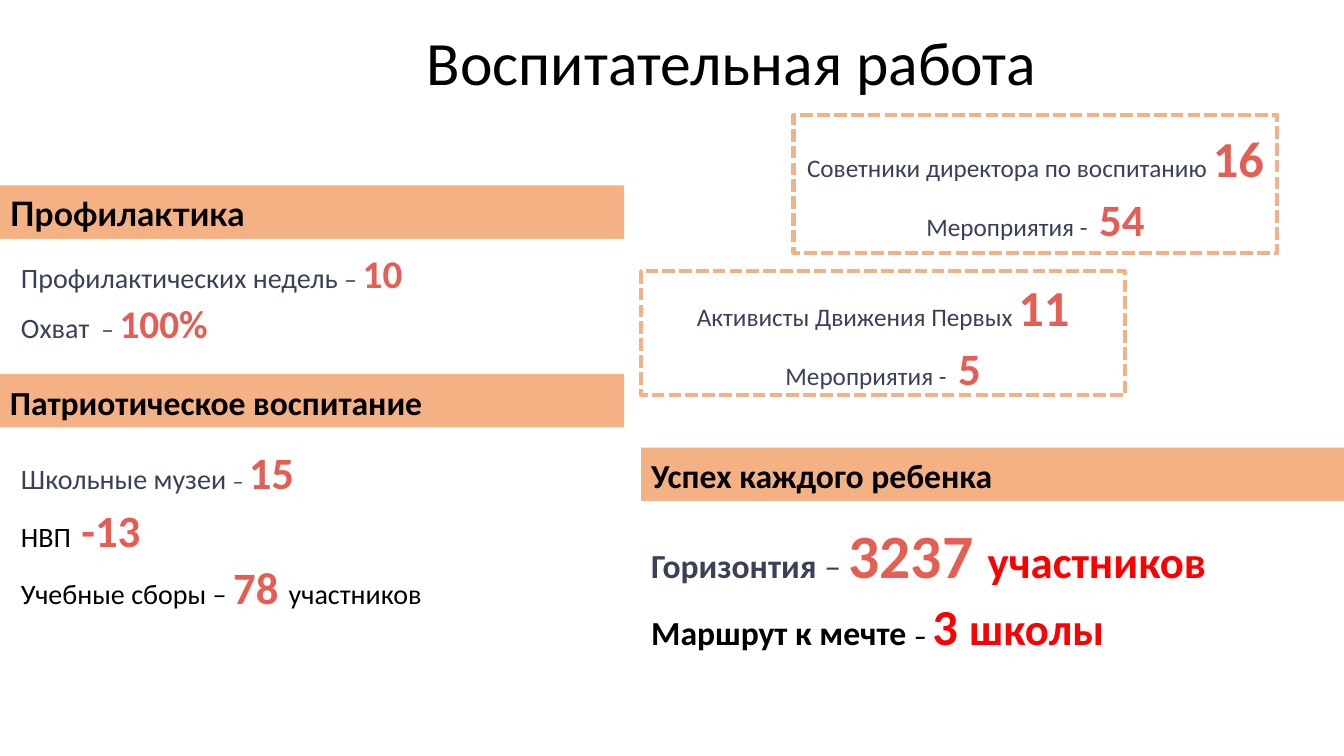
from dataclasses import dataclass
from typing import NamedTuple

from pptx import Presentation
from pptx.dml.color import RGBColor
from pptx.enum.dml import MSO_LINE
from pptx.enum.shapes import MSO_SHAPE
from pptx.enum.text import MSO_ANCHOR, MSO_AUTO_SIZE, PP_ALIGN
from pptx.shapes.autoshape import Shape
from pptx.slide import Slide
from pptx.text.text import TextFrame
from pptx.util import Emu, Pt

EMU_PER_PX = 9144


@dataclass(frozen=True)
class Theme:
    font: str = "Calibri"
    band_font: str = "Lato"
    accent: str = "F4B183"
    ink: str = "000000"
    slate: str = "3A4058"
    coral: str = "E45E53"
    red: str = "FF0000"
    title: int = 44
    giant: int = 44
    huge: int = 36
    large: int = 32
    medium: int = 28
    heading: int = 24
    body: int = 20
    small: int = 18
    dash: int = 16
    frame_width: int = 3
    line_spacing: float = 1.07


THEME = Theme()


class Box(NamedTuple):
    left: int
    top: int
    width: int
    height: int


class Span(NamedTuple):
    text: str
    size: int
    color: str = THEME.slate
    bold: bool = False


Line = tuple[Span, ...]


@dataclass(frozen=True)
class Band:
    box: Box
    heading: str
    font: str = THEME.font


@dataclass(frozen=True)
class Facts:
    box: Box
    lines: tuple[Line, ...]


def figure(text: str, size: int, color: str = THEME.coral) -> Span:
    """A bold highlighted number or word."""
    return Span(text, size, color, True)


def framed_lines(group: str, people: str, events: str) -> tuple[Line, ...]:
    """Head count and event count of one group."""
    return (
        (Span(f"{group} ", THEME.small), figure(people, THEME.huge)),
        (Span("Мероприятия -  ", THEME.small), figure(events, THEME.large)),
    )


BANDS = (
    Band(Box(0, 184, 619, 53), "Профилактика", THEME.band_font),
    Band(Box(0, 371, 619, 53), "Патриотическое воспитание"),
    Band(Box(636, 444, 697, 53), "Успех каждого ребенка"),
)

FACTS = (
    Facts(Box(11, 239, 655, 143), (
        (Span("Профилактических недель ", THEME.body), Span("– ", THEME.small),
         figure("10", THEME.medium)),
        (Span("Охват ", THEME.body), Span(" – ", THEME.small),
         figure("100%", THEME.medium)),
    )),
    Facts(Box(11, 433, 441, 225), (
        (Span("Школьные музеи ", THEME.body), Span("– ", THEME.dash),
         figure("15", THEME.large)),
        (Span("НВП", THEME.body, THEME.ink), figure(" -13", THEME.large)),
        (Span("Учебные сборы – ", THEME.body, THEME.ink), figure("78 ", THEME.large),
         Span("участников", THEME.body, THEME.ink)),
    )),
    Facts(Box(636, 503, 599, 154), (
        (Span("Горизонтия ", THEME.heading, bold=True), Span("– ", THEME.heading),
         figure("3237 ", THEME.giant), figure("участников", THEME.large, THEME.red)),
        (Span("Маршрут к мечте ", THEME.heading, THEME.ink, True),
         Span("– ", THEME.small, THEME.ink, True),
         figure("3 ", THEME.huge, THEME.red), figure("школы", THEME.large, THEME.red)),
    )),
)

FRAMES = (
    Facts(Box(787, 114, 480, 137),
          framed_lines("Советники директора по воспитанию", "16", "54")),
    Facts(Box(636, 269, 480, 123),
          framed_lines("Активисты Движения Первых", "11", "5")),
)


def emu(box: Box) -> tuple[Emu, ...]:
    return tuple(Emu(length * EMU_PER_PX) for length in box)


def write(frame: TextFrame, lines: tuple[Line, ...], align: PP_ALIGN,
          anchor: MSO_ANCHOR, font: str = THEME.font) -> None:
    frame.word_wrap = True
    frame.auto_size = MSO_AUTO_SIZE.NONE
    frame.vertical_anchor = anchor
    frame.text = "\n" * (len(lines) - 1)
    for paragraph, line in zip(frame.paragraphs, lines):
        paragraph.alignment = align
        paragraph.line_spacing = THEME.line_spacing
        for span in line:
            run = paragraph.add_run()
            run.text = span.text
            run.font.name = font
            run.font.size = Pt(span.size)
            run.font.bold = span.bold
            run.font.color.rgb = RGBColor.from_string(span.color)


def add_rectangle(slide: Slide, box: Box) -> Shape:
    rectangle = slide.shapes.add_shape(MSO_SHAPE.RECTANGLE, *emu(box))
    rectangle.shadow.inherit = False
    return rectangle


def add_band(slide: Slide, band: Band) -> None:
    strip = add_rectangle(slide, band.box)
    strip.fill.solid()
    strip.fill.fore_color.rgb = RGBColor.from_string(THEME.accent)
    strip.line.fill.background()
    heading = Span(band.heading, THEME.heading, THEME.ink, True)
    write(strip.text_frame, ((heading,),), PP_ALIGN.LEFT, MSO_ANCHOR.TOP, band.font)


def add_facts(slide: Slide, facts: Facts) -> None:
    listing = slide.shapes.add_textbox(*emu(facts.box))
    write(listing.text_frame, facts.lines, PP_ALIGN.LEFT, MSO_ANCHOR.TOP)


def add_frame(slide: Slide, facts: Facts) -> None:
    border = add_rectangle(slide, facts.box)
    border.fill.background()
    border.line.color.rgb = RGBColor.from_string(THEME.accent)
    border.line.width = Pt(THEME.frame_width)
    border.line.dash_style = MSO_LINE.SQUARE_DOT
    write(border.text_frame, facts.lines, PP_ALIGN.CENTER, MSO_ANCHOR.MIDDLE)


def add_title(slide: Slide, text: str, box: Box) -> None:
    title = slide.shapes.title
    title.left, title.top, title.width, title.height = emu(box)
    heading = Span(text, THEME.title, THEME.ink)
    write(title.text_frame, ((heading,),), PP_ALIGN.CENTER, MSO_ANCHOR.MIDDLE)


def main() -> None:
    presentation = Presentation()
    presentation.slide_width = Emu(1333 * EMU_PER_PX)
    presentation.slide_height = Emu(750 * EMU_PER_PX)
    slide = presentation.slides.add_slide(presentation.slide_layouts[5])
    add_title(slide, "Воспитательная работа ", Box(227, 11, 1012, 94))
    for band in BANDS:
        add_band(slide, band)
    for facts in FACTS:
        add_facts(slide, facts)
    for facts in FRAMES:
        add_frame(slide, facts)
    presentation.save("out.pptx")


if __name__ == "__main__":
    main()
